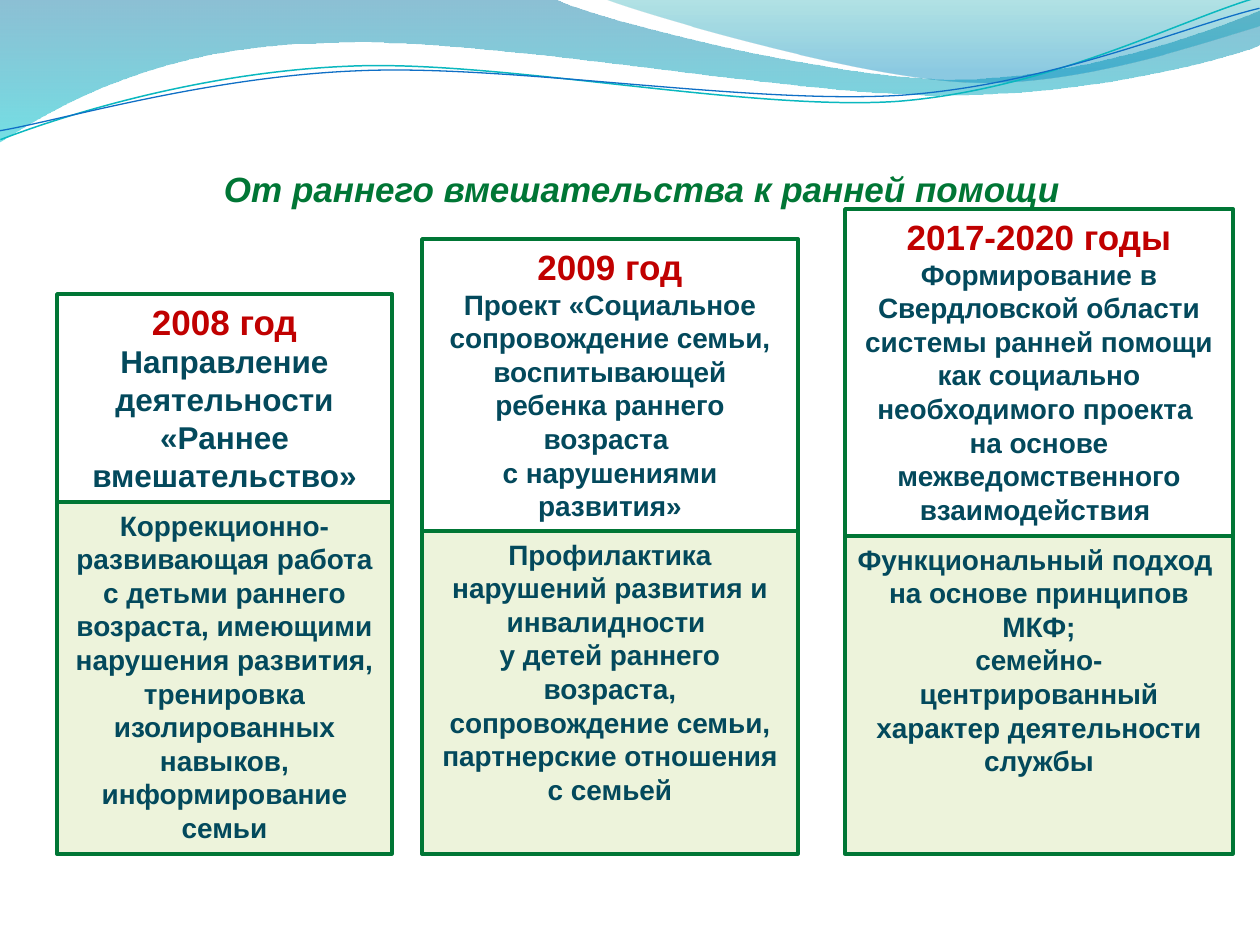
import lxml.etree
import pptx
import pptx.dml.color
import pptx.enum.shapes
import pptx.enum.text
import pptx.oxml.ns
import pptx.util

RGBColor = pptx.dml.color.RGBColor
Anchor = pptx.enum.text.MSO_ANCHOR
Align = pptx.enum.text.PP_ALIGN
qn = pptx.oxml.ns.qn

PIXELS_PER_INCH = 126
FONT = "Arial"
WHITE = RGBColor(0xFF, 0xFF, 0xFF)
GREEN = RGBColor(0x00, 0x76, 0x35)
RED = RGBColor(0xC0, 0x00, 0x00)
INK = RGBColor(0x03, 0x49, 0x5C)
PALE_GREEN = RGBColor(0xED, 0xF3, 0xDB)
DEEP_BLUE = RGBColor(0x00, 0x74, 0xA1)
CYAN = RGBColor(0x00, 0xC6, 0xCF)
TEAL = RGBColor(0x00, 0xA1, 0xA9)
SKY = RGBColor(0x00, 0x8B, 0xBF)
TEAL_LINE = RGBColor(0x0A, 0xB8, 0xBF)
BLUE_LINE = RGBColor(0x0F, 0x6F, 0xC6)

BANDS = [
    ([(-1, 0), (554, -1),
      ((600, 21), (837, 79), (955, 79)),
      ((1074, 79), (1207, 33), (1260, 11)), (1261, 45),
      ((1239, 55), (1096, 96), (940, 95)),
      ((784, 95), (481, 35), (324, 43)),
      ((163, 45), (58, 105), (-1, 142))],
     [(0, DEEP_BLUE, 45), (1, CYAN, 55)]),
    ([(604, -1),
      ((641, 14), (859, 78), (969, 82)),
      ((1079, 87), (1211, 40), (1260, 26)), (1260, 0)],
     [(0, TEAL, 30), (0.8, SKY, 45)]),
]

WAVE_ROTATION = 357.3
WAVES = [
    ([(-2, 110),
      ((58, 90), (199, 52), (349, 53)),
      ((498, 53), (745, 117), (896, 114)),
      ((1049, 109), (1184, 45), (1261, 27))], TEAL_LINE, 0.85),
    ([(-2, 101),
      ((57, 94), (207, 57), (357, 58)),
      ((509, 58), (750, 111), (902, 108)),
      ((1052, 104), (1188, 52), (1262, 38))], BLUE_LINE, 0.75),
]

CARD_BOTTOM = 854
STAGES = [
    (57, 335, 294, 502, "2008 год", 18,
     ["Направление деятельности «Раннее вмешательство»"],
     ["Коррекционно-развивающая работа с детьми раннего возраста, имеющими "
      "нарушения развития, тренировка изолированных навыков, информирование семьи"]),
    (422, 376, 239, 531, "2009 год", 16,
     ["Проект «Социальное сопровождение семьи, воспитывающей ребенка раннего "
      "возраста \vс нарушениями развития»"],
     ["Профилактика нарушений развития и инвалидности \vу детей раннего возраста, "
      "сопровождение семьи, партнерские отношения с семьей"]),
    (845, 388, 209, 536, "2017-2020 годы", 16,
     ["Формирование в Свердловской области системы ранней помощи как социально "
      "необходимого проекта ",
      "на основе межведомственного взаимодействия "],
     ["Функциональный подход  на основе принципов МКФ;",
      "семейно-центрированный характер деятельности службы"]),
]


def px(length):
    """Turn pixels into EMU."""
    return pptx.util.Emu(round(length * 914400 / PIXELS_PER_INCH))


def is_curve(segment):
    """Tell whether a segment is a triple of curve points."""
    return len(segment) == 3


def bend_curves(shape, outline):
    """Merge the line segments of each triple into one cubic curve."""
    drawing = next(shape.element.iter(qn("a:path")))
    lines = iter(drawing.findall(qn("a:lnTo")))
    for segment in outline[1:]:
        line = next(lines)
        if is_curve(segment):
            line.addprevious(curve := drawing.makeelement(qn("a:cubicBezTo")))
            for part in (line, next(lines), next(lines)):
                curve.append(part[0])
                drawing.remove(part)


def add_outline(slide, outline, close):
    """Add a freeform along an outline."""
    points = []
    for segment in outline:
        points.extend(segment if is_curve(segment) else [segment])
    points = [(px(x), px(y)) for x, y in points]
    builder = slide.shapes.build_freeform(*points[0])
    builder.add_line_segments(points[1:], close=close)
    shape = builder.convert_to_shape()
    shape.shadow.inherit = False
    bend_curves(shape, outline)
    return shape


def add_band(slide, outline, stops):
    """Add a translucent band shaded from top to bottom."""
    shape = add_outline(slide, outline, True)
    shape.line.fill.background()
    shape.fill.gradient()
    shape.fill.gradient_angle = 270
    for stop, (position, color, _) in zip(shape.fill.gradient_stops, stops):
        stop.position = position
        stop.color.rgb = color
    colors = shape.element.spPr.iter(qn("a:srgbClr"))
    for element, (_, _, opacity) in zip(colors, stops):
        alpha = lxml.etree.SubElement(element, qn("a:alpha"))
        alpha.set("val", str(opacity * 1000))


def add_wave(slide, outline, color, width):
    """Add a thin curved line."""
    shape = add_outline(slide, outline, False)
    shape.rotation = WAVE_ROTATION
    shape.fill.background()
    shape.line.color.rgb = color
    shape.line.width = pptx.util.Pt(width)


def write_paragraph(paragraph, text, size, color, alignment):
    """Fill a paragraph with bold text."""
    paragraph.text = text
    paragraph.alignment = alignment
    font = paragraph.font
    font.name, font.size, font.bold = FONT, pptx.util.Pt(size), True
    font.color.rgb = color


def add_title(slide, text):
    """Add the slide heading."""
    frame = slide.shapes.add_textbox(px(224), px(130), px(910), px(79)).text_frame
    frame.word_wrap = True
    frame.vertical_anchor = Anchor.BOTTOM
    frame.margin_left = frame.margin_right = frame.margin_bottom = 0
    write_paragraph(frame.paragraphs[0], text, 20, GREEN, Align.LEFT)
    frame.paragraphs[0].font.italic = True


def add_card(slide, left, top, width, bottom, fill, lines):
    """Add a bordered box holding centred (text, size, color) lines."""
    shape = slide.shapes.add_shape(
        pptx.enum.shapes.MSO_SHAPE.RECTANGLE,
        px(left), px(top), px(width), px(bottom - top))
    shape.shadow.inherit = False
    shape.fill.solid()
    shape.fill.fore_color.rgb = fill
    shape.line.color.rgb = GREEN
    shape.line.width = pptx.util.Pt(2)
    frame = shape.text_frame
    frame.word_wrap = True
    frame.vertical_anchor = Anchor.TOP
    for index, line in enumerate(lines):
        paragraph = frame.add_paragraph() if index else frame.paragraphs[0]
        write_paragraph(paragraph, *line, Align.CENTER)


def add_stage(slide, left, width, top, middle, year, size, heading, details):
    """Add one stage: a white card above a tinted one."""
    heading_lines = [(year, 20, RED)] + [(text, size, INK) for text in heading]
    detail_lines = [(text, 16, INK) for text in details]
    add_card(slide, left, top, width, middle, WHITE, heading_lines)
    add_card(slide, left, middle, width, CARD_BOTTOM, PALE_GREEN, detail_lines)


def main():
    """Build and save the slide."""
    presentation = pptx.Presentation()
    presentation.slide_width, presentation.slide_height = px(1260), px(945)
    slide = presentation.slides.add_slide(presentation.slide_layouts[6])
    for band in BANDS:
        add_band(slide, *band)
    for wave in WAVES:
        add_wave(slide, *wave)
    add_title(slide, "От раннего вмешательства к ранней помощи")
    for stage in STAGES:
        add_stage(slide, *stage)
    presentation.save("out.pptx")


if __name__ == "__main__":
    main()
